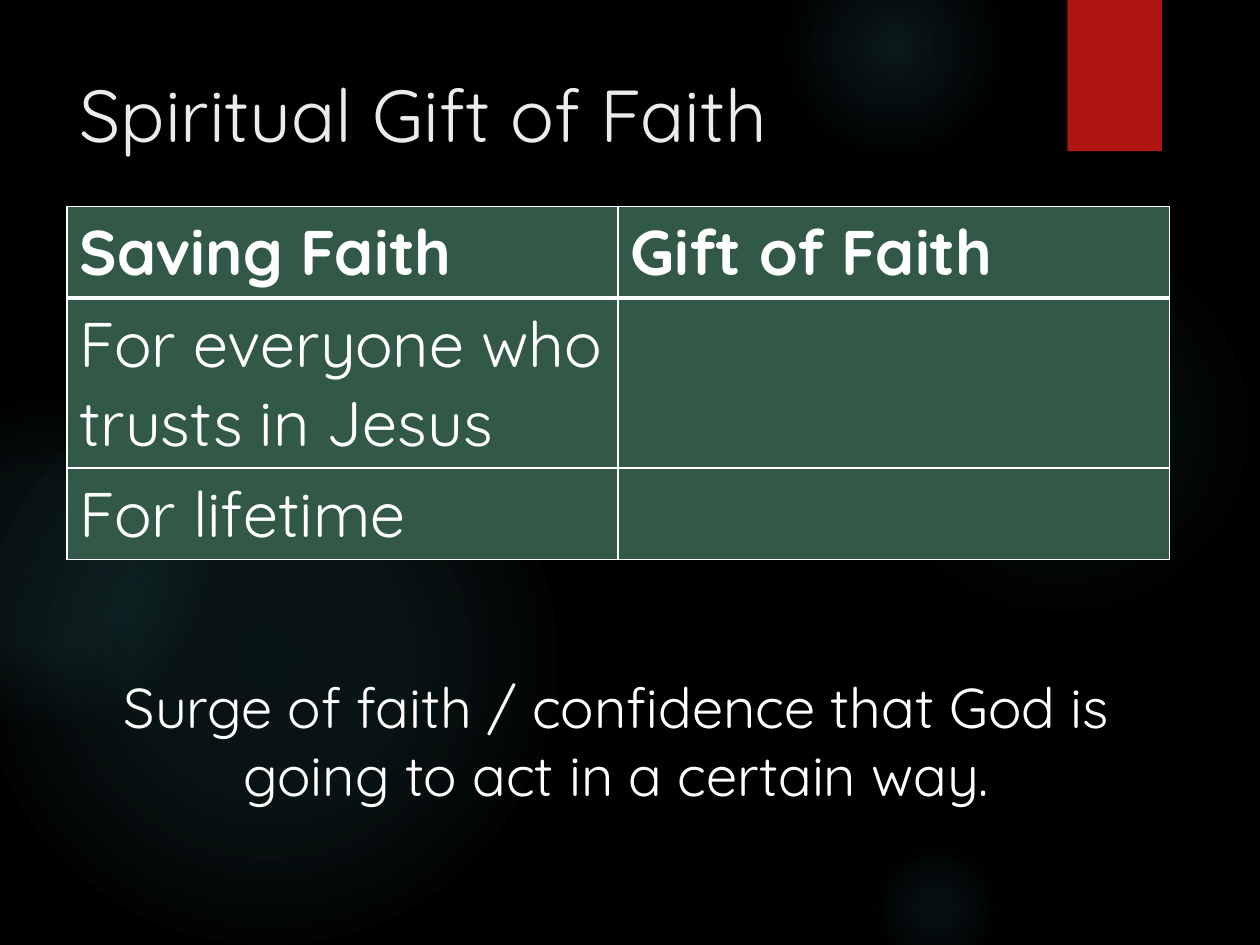
import pptx
import pptx.dml.color
import pptx.enum.shapes
import pptx.enum.text
import pptx.oxml
import pptx.oxml.ns
import pptx.util

Pt = pptx.util.Pt
SHAPES = pptx.enum.shapes.MSO_SHAPE
ALIGN = pptx.enum.text.PP_ALIGN
ANCHOR = pptx.enum.text.MSO_ANCHOR
AUTO_SIZE = pptx.enum.text.MSO_AUTO_SIZE

FONT = "Quicksand"
WHITE, GLOW, GREEN = "FFFFFF", "50B9C1", "325948"

# left, top, diameter, then (position %, opacity %) stops from the centre out
HALOS = [
    (496, 132, 222, [(0, 7), (36, 6), (69, 0)]),
    (448, -36, 126, [(0, 14), (36, 7), (73, 0)]),
    (496, 480, 78, [(0, 9), (36, 5), (66, 0)]),
    (-12, 210, 330, [(0, 11), (36, 10), (75, 0)]),
    (-66, 228, 186, [(0, 8), (36, 8), (72, 0)]),
]
FAITH_ROWS = [
    ("Saving Faith", "Gift of Faith"),
    ("For everyone who trusts in Jesus", ""),
    ("For lifetime", ""),
]


def rgb(value):
    return pptx.dml.color.RGBColor.from_string(value)


def xml(tag, content, attributes=""):
    """Parse one DrawingML element."""
    return pptx.oxml.parse_xml(
        f'<a:{tag} {pptx.oxml.ns.nsdecls("a")} {attributes}>{content}</a:{tag}>')


def colour_xml(value, opacity=100):
    return f'<a:srgbClr val="{value}"><a:alpha val="{opacity * 1000}"/></a:srgbClr>'


def write(frame, text, size, colour=WHITE, bold=False, align=ALIGN.LEFT):
    paragraph = frame.paragraphs[0]
    paragraph.alignment = align
    run = paragraph.add_run()
    run.text = text
    formats = {"name": FONT, "size": Pt(size), "bold": bold}
    for name, value in formats.items():
        setattr(run.font, name, value)
    run.font.color.rgb = rgb(colour)


def add_plain_shape(slide, kind, left, top, width, height):
    shape = slide.shapes.add_shape(kind, Pt(left), Pt(top), Pt(width), Pt(height))
    shape.shadow.inherit = False
    shape.line.fill.background()
    return shape


def add_halo(slide, left, top, diameter, stops):
    halo = add_plain_shape(slide, SHAPES.OVAL, left, top, diameter, diameter)
    stop_list = "".join(
        f'<a:gs pos="{position * 1000}">{colour_xml(GLOW, opacity)}</a:gs>'
        for position, opacity in stops)
    centre = '<a:fillToRect l="50000" t="50000" r="50000" b="50000"/>'
    gradient = xml("gradFill", f"<a:gsLst>{stop_list}</a:gsLst>"
                               f'<a:path path="circle">{centre}</a:path>')
    halo.element.spPr.find(pptx.oxml.ns.qn("a:prstGeom")).addnext(gradient)


def add_ribbon(slide):
    ribbon = add_plain_shape(slide, SHAPES.RECTANGLE, 610, 0, 54, 86.4)
    ribbon.fill.solid()
    ribbon.fill.fore_color.rgb = rgb("B01513")
    shadow = xml("outerShdw", colour_xml("000000", 45),
                 f'blurRad="{Pt(3)}" dist="{Pt(2)}" dir="5400000" rotWithShape="0"')
    ribbon.element.spPr.find(pptx.oxml.ns.qn("a:effectLst")).append(shadow)


def add_title(slide, text):
    title = slide.shapes.title
    place = {"left": Pt(38.2), "top": Pt(36), "width": Pt(556), "height": Pt(110)}
    for name, value in place.items():
        setattr(title, name, value)
    title.text_frame.vertical_anchor = ANCHOR.TOP
    title.text_frame.auto_size = AUTO_SIZE.NONE
    write(title.text_frame, text, 42, "EBEBEB")
    slide.shapes.element.append(title.element)  # bring in front of the halos


def set_borders(cell, **widths):
    properties = cell._tc.get_or_add_tcPr()
    for index, side in enumerate("LRTB"):
        line = f"<a:solidFill>{colour_xml(WHITE)}</a:solidFill>"
        properties.insert(index, xml(f"ln{side}", line, f'w="{Pt(widths.get(side, 1))}"'))


def add_faith_table(slide):
    frame = slide.shapes.add_table(len(FAITH_ROWS), 2, Pt(38.2), Pt(118), Pt(630), Pt(237.6))
    table = frame.table
    for row in table.rows:
        row.height = Pt(29.2)  # rows grow to fit their text
    thick_sides = [{"B": 3}, {"T": 3}, {}]
    for row_index, texts in enumerate(FAITH_ROWS):
        for column_index, text in enumerate(texts):
            cell = table.cell(row_index, column_index)
            cell.fill.solid()
            cell.fill.fore_color.rgb = rgb(GREEN)
            set_borders(cell, **thick_sides[row_index])
            if text:
                write(cell.text_frame, text, 36, bold=row_index == 0)


def add_summary(slide, text):
    summary = slide.shapes.add_textbox(Pt(24), Pt(381), Pt(657), Pt(85))
    summary.text_frame.word_wrap = True
    summary.text_frame.auto_size = AUTO_SIZE.SHAPE_TO_FIT_TEXT
    write(summary.text_frame, text, 32, align=ALIGN.CENTER)


def main():
    deck = pptx.Presentation()
    deck.slide_width, deck.slide_height = Pt(720), Pt(540)
    slide = deck.slides.add_slide(deck.slide_layouts.get_by_name("Title Only"))
    slide.background.fill.solid()
    slide.background.fill.fore_color.rgb = rgb("000000")
    for halo in HALOS:
        add_halo(slide, *halo)
    add_ribbon(slide)
    add_title(slide, "Spiritual Gift of Faith")
    add_faith_table(slide)
    add_summary(slide, "Surge of faith / confidence that God is going to act in a certain way.")
    deck.save("out.pptx")


if __name__ == "__main__":
    main()
